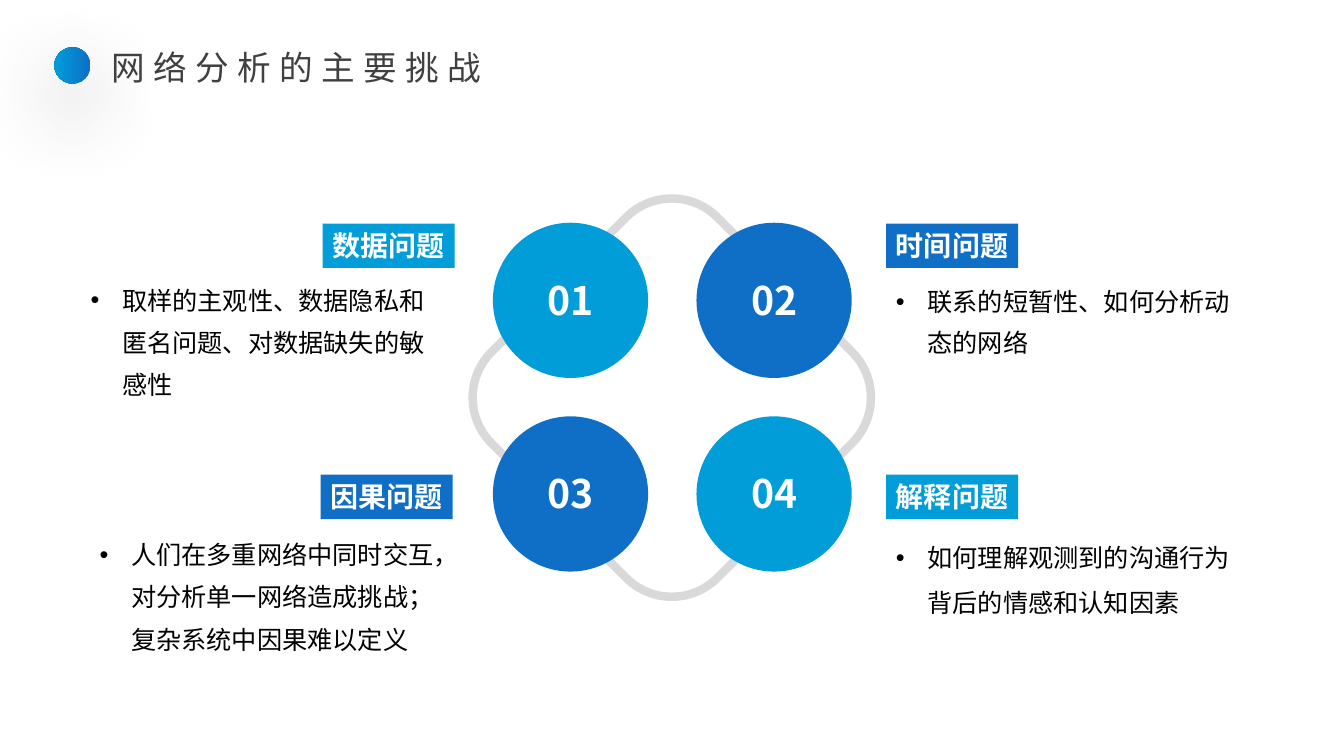
import pptx
import pptx.dml.color
import pptx.enum.shapes
import pptx.enum.text
import pptx.oxml
import pptx.oxml.ns
import pptx.util
from lxml import etree

Pt = pptx.util.Pt
SHAPE = pptx.enum.shapes.MSO_SHAPE
ALIGN = pptx.enum.text.PP_ALIGN
ANCHOR = pptx.enum.text.MSO_ANCHOR
FIT = pptx.enum.text.MSO_AUTO_SIZE.SHAPE_TO_FIT_TEXT
FONT = "Noto Sans CJK SC"
SKY, BLUE, WHITE = "009DD9", "0F6FC6", "FFFFFF"
CIRCLE = 110.9
COLUMNS, ROWS = (352.1, 497.5), (159.1, 297.4)

CHALLENGES = [
    ("01", "数据问题", SKY, (230.4, 159.8), (57.6, 191.5, 267.1, 98.6), 1.4,
     "取样的主观性、数据隐私和匿名问题、对数据缺失的敏感性"),
    ("02", "时间问题", BLUE, (632.9, 159.8), (632.9, 193.7, 254.9, 95), 1.35,
     "联系的短暂性、如何分析动态的网络"),
    ("03", "因果问题", BLUE, (229, 339.1), (64.1, 373, 260.6, 98.6), 1.4,
     "人们在多重网络中同时交互，对分析单一网络造成挑战；复杂系统中因果难以定义"),
    ("04", "解释问题", SKY, (632.9, 339.1), (632.9, 373, 254.9, 72.7), 1.5,
     "如何理解观测到的沟通行为背后的情感和认知因素"),
]


def color(value):
    """Return the RGB colour of a hex string."""
    return pptx.dml.color.RGBColor.from_string(value)


def add_shape(shapes, kind, box, fill=None):
    """Add a preset shape without outline or shadow."""
    shape = shapes.add_shape(kind, *map(Pt, box))
    shape.shadow.inherit = False
    if fill:
        shape.fill.solid()
        shape.fill.fore_color.rgb = color(fill)
    else:
        shape.fill.background()
    shape.line.fill.background()
    return shape


def write(shape, text, size, ink, bold=False, align=ALIGN.LEFT, wrap=False):
    """Write one run into a shape and return its paragraph and run."""
    frame = shape.text_frame
    frame.word_wrap = wrap
    frame.auto_size = FIT
    frame.vertical_anchor = ANCHOR.TOP
    paragraph = frame.paragraphs[0]
    paragraph.alignment = align
    run = paragraph.add_run()
    run.text = text
    run.font.size = Pt(size)
    run.font.bold = bold
    run.font.color.rgb = color(ink)
    run.font.name = FONT
    east_asian = etree.SubElement(run.font._element, pptx.oxml.ns.qn("a:ea"))
    east_asian.set("typeface", FONT)
    return paragraph, run


def add_title(shapes):
    """Add the gradient dot with its soft shadow and the spaced title."""
    dot = add_shape(shapes, SHAPE.OVAL, (38.9, 33.8, 25.9, 25.9), BLUE)
    dot.fill.gradient()
    dot.fill.gradient_angle = 180
    for stop, position, shade in zip(dot.fill.gradient_stops, (0, 1), (BLUE, SKY)):
        stop.position = position
        stop.color.rgb = color(shade)
    effects = dot._element.spPr.find(pptx.oxml.ns.qn("a:effectLst"))
    effects.append(pptx.oxml.parse_xml(
        f'<a:outerShdw {pptx.oxml.ns.nsdecls("a")} blurRad="{Pt(60)}" dist="{Pt(20)}" '
        'dir="5400000" algn="t" rotWithShape="0"><a:srgbClr val="000000">'
        '<a:alpha val="40000"/></a:srgbClr></a:outerShdw>'))
    title = shapes.add_textbox(*map(Pt, (72.7, 30.2, 431.3, 36)))
    run = write(title, "网络分析的主要挑战", 24, "404040", align=ALIGN.JUSTIFY, wrap=True)[1]
    run.font._element.set("spc", "600")


def add_ring(shapes):
    """Add the grey rounded ring that links the circles."""
    ring = add_shape(shapes, SHAPE.ROUNDED_RECTANGLE, (365.8, 169.9, 228.2, 228.2))
    ring.adjustments[0] = 0.202
    ring.rotation = 315
    ring.line.color.rgb = color("D9D9D9")
    ring.line.width = Pt(6)


def add_bullet(shapes, box, text, spacing):
    """Add a bulleted description."""
    description = shapes.add_textbox(*map(Pt, box))
    paragraph = write(description, text, 18, "000000", wrap=True)[0]
    paragraph.line_spacing = spacing
    properties = paragraph._p.get_or_add_pPr()
    properties.set("marL", str(Pt(22.5)))
    properties.set("indent", str(-Pt(22.5)))
    face = etree.SubElement(properties, pptx.oxml.ns.qn("a:buFont"))
    face.set("typeface", "Arial")
    mark = etree.SubElement(properties, pptx.oxml.ns.qn("a:buChar"))
    mark.set("char", "•")


def main():
    """Build the slide and save it."""
    deck = pptx.Presentation()
    deck.slide_width, deck.slide_height = Pt(960), Pt(540)
    shapes = deck.slides.add_slide(deck.slide_layouts[6]).shapes
    add_title(shapes)
    diagram = shapes.add_group_shape().shapes
    add_ring(diagram)
    for index, (number, name, fill, corner, box, spacing, text) in enumerate(CHALLENGES):
        row, column = divmod(index, 2)
        left, top = COLUMNS[column], ROWS[row]
        add_shape(diagram, SHAPE.OVAL, (left, top, CIRCLE, CIRCLE), fill)
        numeral = shapes.add_textbox(*map(Pt, (left + 30.6, top + 34.6, 49.7, 41)))
        write(numeral, number, 28, WHITE, True, ALIGN.CENTER)
        label = add_shape(shapes, SHAPE.RECTANGLE, (*corner, 94.3, 31.7), fill)
        write(label, name, 20, WHITE, True, ALIGN.LEFT if column else ALIGN.RIGHT)
        add_bullet(shapes, box, text, spacing)
    deck.save("out.pptx")


if __name__ == "__main__":
    main()
